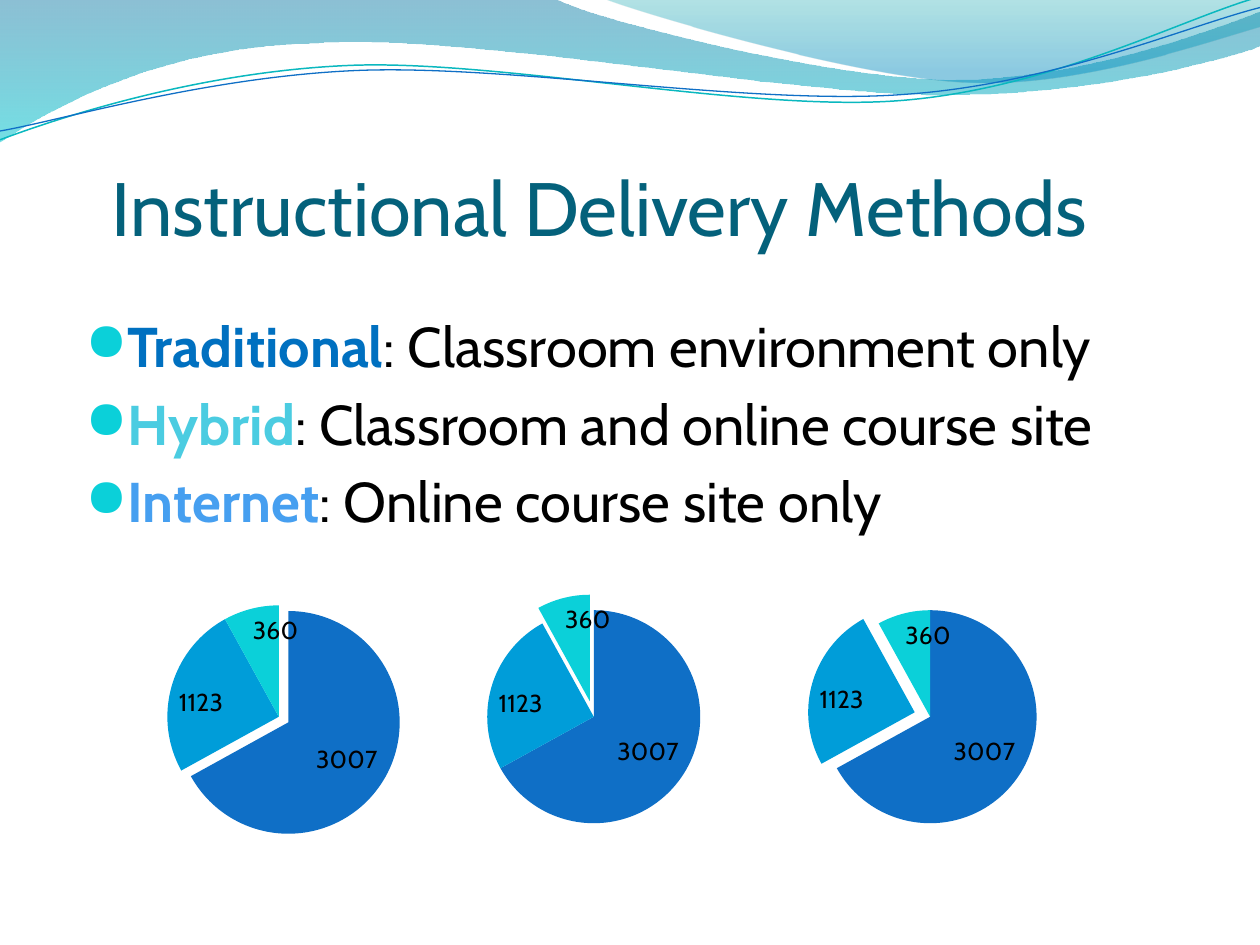
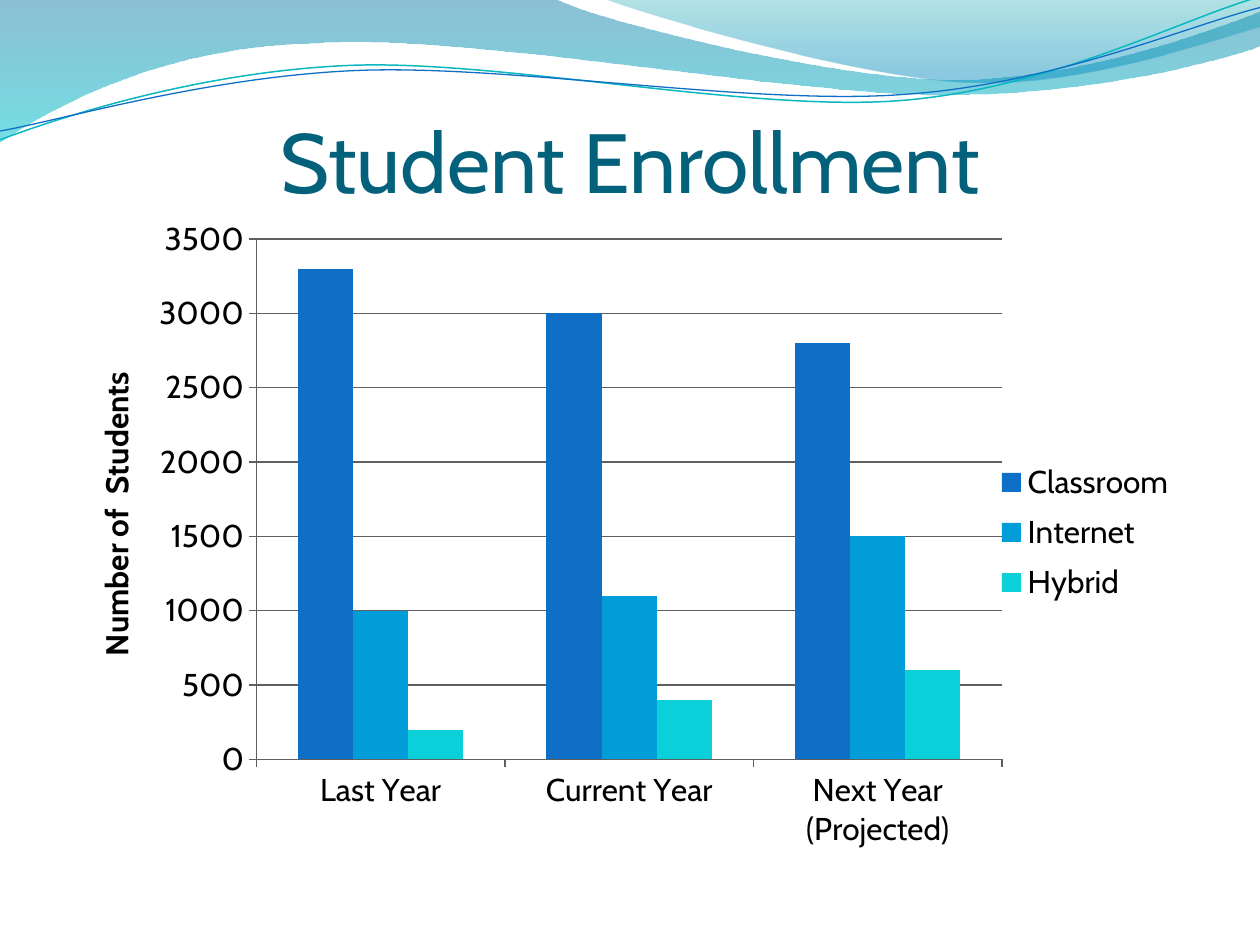
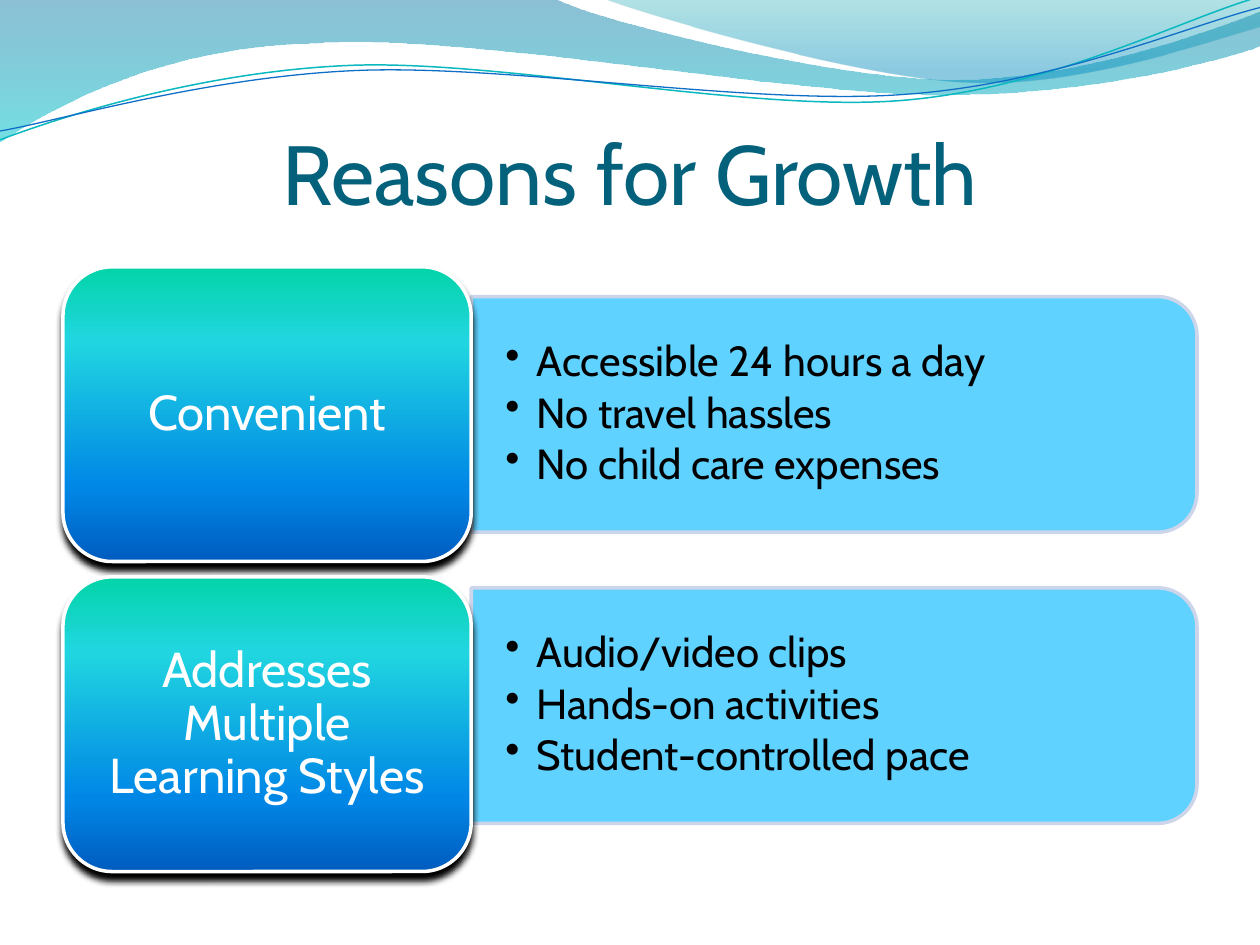
from lxml.etree import SubElement
from pptx import Presentation
from pptx.chart.data import CategoryChartData as ChartData
from pptx.dml.color import RGBColor
from pptx.enum.chart import XL_CHART_TYPE as ChartType
from pptx.enum.chart import XL_LABEL_POSITION as LabelPosition
from pptx.enum.chart import XL_LEGEND_POSITION as LegendPosition
from pptx.enum.chart import XL_TICK_MARK as TickMark
from pptx.enum.shapes import MSO_SHAPE as Shape
from pptx.enum.text import MSO_ANCHOR as Anchor
from pptx.enum.text import PP_ALIGN as Align
from pptx.oxml.ns import qn
from pptx.util import Cm, Pt

FONT = "Cabin"
BULLET_FONT = "OpenSymbol"
COLORS = {
    "title": "04617B", "text": "000000", "white": "FFFFFF", "grid": "5F5F5F",
    "blue": "0F6FC6", "sky": "009DD9", "aqua": "0BD0D9", "teal_line": "0AB8BF",
    "traditional": "0070C0", "hybrid": "4BCCE1", "internet": "469FF0",
    "panel": "4FCEFF", "panel_line": "CCD5EA",
    "wave_top": "0074A1", "wave_bottom": "00C6CF",
    "crest_top": "00A1A9", "crest_bottom": "008BBF",
    "box_green": "03D4A8", "box_cyan": "21D6E0",
    "box_azure": "0087E6", "box_navy": "005CBF",
}
SERIES_COLORS = ("blue", "sky", "aqua")
BAND_BOX = (0, 0, 25.4, 2.87)
WAVES = (
    {"start": (0, 0),
     "segments": [(440, -1), (476, 17, 664, 63, 758, 63), (853, 63, 958, 26, 1000, 9),
                  (1001, 36), (983, 44, 870, 76, 746, 75), (622, 75, 382, 28, 257, 34),
                  (129, 36, 46, 83, -1, 113)],
     "stops": [(0, "wave_top", 45), (100, "wave_bottom", 55)]},
    {"start": (479, -1),
     "segments": [(509, 11, 682, 62, 769, 65), (856, 69, 961, 32, 1000, 21), (1000, 0)],
     "stops": [(0, "crest_top", 30), (80, "crest_bottom", 45)]},
    {"start": (0, 111),
     "segments": [(48, 93, 158, 57, 277, 52), (395, 47, 593, 89, 713, 80),
                  (833, 71, 938, 15, 998, -2)],
     "line": ("teal_line", 0.85)},
    {"start": (0, 104),
     "segments": [(47, 96, 164, 61, 283, 56), (403, 51, 597, 84, 717, 75),
                  (836, 67, 941, 21, 1000, 6)],
     "line": ("blue", 0.75)},
)


def rgb(name):
    """Return the named colour."""
    return RGBColor.from_string(COLORS[name])


def place(box):
    """Turn a box in centimetres into lengths."""
    return [Cm(length) for length in box]


def add_alpha(color_element, percent):
    """Give a colour element an opacity."""
    SubElement(color_element, qn("a:alpha"), val=str(percent * 1000))


def fill_gradient(shape, stops):
    """Fill a shape from top to bottom with (position, colour, opacity) stops."""
    shape.fill.gradient()
    shape.fill.gradient_angle = 270
    stop_list = shape.element.spPr.find(".//" + qn("a:gsLst"))
    stop_list.clear()
    for position, color, opacity in stops:
        stop = SubElement(stop_list, qn("a:gs"), pos=str(position * 1000))
        color_element = SubElement(stop, qn("a:srgbClr"), val=COLORS[color])
        if opacity < 100:
            add_alpha(color_element, opacity)


def outline(shape, color, width):
    """Draw the outline of a shape."""
    shape.line.color.rgb = rgb(color)
    shape.line.width = Pt(width)


def style_font(font, size, color="text", bold=False):
    """Set the typeface, size, colour and weight of a font."""
    font.name = FONT
    font.size = Pt(size)
    font.color.rgb = rgb(color)
    font.bold = bold


def set_frame(text_frame, anchor, margins):
    """Wrap a text frame and set its anchor and margins."""
    text_frame.word_wrap = True
    text_frame.vertical_anchor = anchor
    (text_frame.margin_left, text_frame.margin_top,
     text_frame.margin_right, text_frame.margin_bottom) = place(margins)


def add_bullet(paragraph, character, indent, color="text", size=100):
    """Give a paragraph a hanging bullet."""
    properties = paragraph._p.get_or_add_pPr()
    properties.set("marL", str(Cm(indent)))
    properties.set("indent", str(-Cm(indent)))
    bullet_color = SubElement(properties, qn("a:buClr"))
    SubElement(bullet_color, qn("a:srgbClr"), val=COLORS[color])
    SubElement(properties, qn("a:buSzPct"), val=str(size * 1000))
    SubElement(properties, qn("a:buFont"), typeface=BULLET_FONT)
    SubElement(properties, qn("a:buChar"), char=character)


def curve_segments(shape, segments):
    """Turn each run of three line ends into one cubic curve."""
    line_ends = iter(shape.element.spPr.findall(".//" + qn("a:lnTo")))
    for segment in segments:
        first = next(line_ends)
        if len(segment) == 6:
            first.tag = qn("a:cubicBezTo")
            for _ in range(2):
                line_end = next(line_ends)
                first.append(line_end[0])
                line_end.getparent().remove(line_end)


def add_wave_band(slide, master, box):
    """Draw the waves in thousandths of the band's width and move them to the master."""
    left, top, width, _ = place(box)
    for index, wave in enumerate(WAVES):
        flat = [number for segment in wave["segments"] for number in segment]
        points = [(left + x * width / 1000, top + y * width / 1000)
                  for x, y in [wave["start"], *zip(flat[::2], flat[1::2])]]
        builder = slide.shapes.build_freeform(*points[0])
        builder.add_line_segments(points[1:], close="stops" in wave)
        shape = builder.convert_to_shape()
        curve_segments(shape, wave["segments"])
        shape.shadow.inherit = False
        if "stops" in wave:
            fill_gradient(shape, wave["stops"])
            shape.line.fill.background()
        else:
            shape.fill.background()
            outline(shape, *wave["line"])
        shape.element.nvSpPr.cNvPr.set("id", str(100 + index))
        master.shapes.element.append(shape.element)


def add_title(slide, box, text, size):
    """Write a slide title at the bottom of its box."""
    text_frame = slide.shapes.add_textbox(*place(box)).text_frame
    set_frame(text_frame, Anchor.BOTTOM, (0, 0.13, 0, 0))
    text_frame.text = text
    paragraph = text_frame.paragraphs[0]
    paragraph.alignment = Align.CENTER
    style_font(paragraph.runs[0].font, size, "title")


def start_slide(presentation, title_box, title, size=48):
    """Add a slide with a title."""
    slide = presentation.slides.add_slide(presentation.slide_layouts[6])
    add_title(slide, title_box, title, size)
    return slide


def add_definitions(slide, box, definitions):
    """List terms in colour, each with its meaning."""
    text_frame = slide.shapes.add_textbox(*place(box)).text_frame
    set_frame(text_frame, Anchor.TOP, (0.25, 0.13, 0.25, 0.13))
    for index, (term, meaning, color) in enumerate(definitions):
        paragraph = text_frame.add_paragraph() if index else text_frame.paragraphs[0]
        add_bullet(paragraph, "●", 0.76, "aqua", 95)
        paragraph.space_before = Pt(6)
        for text, run_color, bold in ((term, color, True), (": " + meaning, "text", False)):
            run = paragraph.add_run()
            run.text = text
            style_font(run.font, 32, run_color, bold)


def add_styled_chart(slide, box, chart_type, categories, series):
    """Add a chart with the shared font."""
    data = ChartData()
    data.categories = categories
    for name, values in series:
        data.add_series(name, values)
    chart = slide.shapes.add_chart(chart_type, *place(box), data).chart
    chart.has_title = False
    style_font(chart.font, 18)
    return chart


def add_pie(slide, box, exploded_point, explosion):
    """Add an enrollment pie with one slice pulled out."""
    chart = add_styled_chart(slide, box, ChartType.PIE, ["1", "2", "3"],
                             [("Series 1", (3007, 1123, 360))])
    chart.has_legend = False
    plot = chart.plots[0]
    plot.vary_by_categories = True
    plot.has_data_labels = True
    labels = plot.data_labels
    labels.show_value = True
    labels.show_percentage = False
    labels.position = LabelPosition.INSIDE_END
    style_font(labels.font, 14)
    for index, color in enumerate(SERIES_COLORS):
        point_format = plot.series[0].points[index].format
        point_format.fill.solid()
        point_format.fill.fore_color.rgb = rgb(color)
    point = plot.series[0]._element.findall(qn("c:dPt"))[exploded_point]
    pull = SubElement(point, qn("c:explosion"), val=str(explosion))
    point.find(qn("c:spPr")).addprevious(pull)


def set_layout(element, index, chart_box, part_box, inner=False):
    """Fix a chart part at a place in centimetres inside the chart."""
    layout = element.find(qn("c:layout"))
    if layout is None:
        layout = SubElement(element, qn("c:layout"))
        element.insert(index, layout)
    manual = SubElement(layout, qn("c:manualLayout"))
    settings = [("layoutTarget", "inner")] if inner else []
    settings += [("xMode", "edge"), ("yMode", "edge")]
    sizes = chart_box[2:] * 2
    settings += [(name, length / size) for name, length, size in zip("xywh", part_box, sizes)]
    for name, value in settings:
        SubElement(manual, qn("c:" + name), val=str(value))


def add_enrollment_chart(slide, box):
    """Add the clustered columns of students by year."""
    chart = add_styled_chart(
        slide, box, ChartType.COLUMN_CLUSTERED,
        ["Last Year", "Current Year", "Next Year\n(Projected)"],
        [("Classroom", (3300, 3000, 2800)), ("Internet", (1000, 1100, 1500)),
         ("Hybrid", (200, 400, 600))])
    chart.has_legend = True
    chart.legend.position = LegendPosition.RIGHT
    chart.legend.include_in_layout = False
    plot = chart.plots[0]
    plot.vary_by_categories = False
    plot.gap_width = 150
    plot.overlap = 0
    for series, color in zip(plot.series, SERIES_COLORS):
        series.format.fill.solid()
        series.format.fill.fore_color.rgb = rgb(color)
    value_axis = chart.value_axis
    value_axis.minimum_scale, value_axis.maximum_scale = 0, 3500
    value_axis.major_unit = 500
    value_axis.has_major_gridlines = True
    for part in (value_axis, chart.category_axis, value_axis.major_gridlines):
        outline(part.format, "grid", 0.75)
    for axis in (value_axis, chart.category_axis):
        axis.major_tick_mark = TickMark.OUTSIDE
        style_font(axis.tick_labels.font, 18)
    text_frame = value_axis.axis_title.text_frame
    text_frame.text = "Number of  Students"
    style_font(text_frame.paragraphs[0].runs[0].font, 18, bold=True)
    text_frame._txBody.bodyPr.set("rot", "-5400000")
    text_frame._txBody.bodyPr.set("vert", "horz")
    set_layout(chart._chartSpace.chart.plotArea, 0, box, (3.7, 0.58, 15.03, 10.49), True)
    set_layout(value_axis.axis_title._element, 1, box, (0.32, 3.15))
    set_layout(chart.legend._element, 1, box, (18.59, 4.86, 3.63, 3.27))


def add_panel(slide, box, points):
    """Add a panel rounded on its right side, with bullet points."""
    left, top, width, height = box
    turned = (left + (width - height) / 2, top + (height - width) / 2, height, width)
    shape = slide.shapes.add_shape(Shape.ROUND_2_SAME_RECTANGLE, *place(turned))
    shape.rotation = 90
    shape.shadow.inherit = False
    shape.fill.solid()
    shape.fill.fore_color.rgb = rgb("panel")
    add_alpha(shape.element.spPr.find(qn("a:solidFill"))[0], 90)
    outline(shape, "panel_line", 2)
    text_box = (left, top + 0.23, width - 0.23, height - 0.46)
    text_frame = slide.shapes.add_textbox(*place(text_box)).text_frame
    set_frame(text_frame, Anchor.MIDDLE, (0.69, 0.36, 0.69, 0.36))
    text_frame.text = "\n".join(points)
    for paragraph in text_frame.paragraphs:
        add_bullet(paragraph, "•", 0.63)
        paragraph.line_spacing = 0.9
        paragraph.space_after = Pt(3.6)
        style_font(paragraph.runs[0].font, 24)


def add_reason_box(slide, box, text):
    """Add a glossy rounded box that names a reason."""
    shape = slide.shapes.add_shape(Shape.ROUNDED_RECTANGLE, *place(box))
    fill_gradient(shape, [(0, "box_green", 100), (25, "box_cyan", 100),
                          (75, "box_azure", 100), (100, "box_navy", 100)])
    outline(shape, "white", 2)
    shape.shadow.inherit = False
    effects = shape.element.spPr.find(qn("a:effectLst"))
    shadow = SubElement(effects, qn("a:outerShdw"), blurRad=str(Pt(4)), dist=str(Pt(4)),
                        dir="5400000", algn="ctr", rotWithShape="0")
    SubElement(shadow, qn("a:srgbClr"), val=COLORS["text"])
    set_frame(shape.text_frame, Anchor.MIDDLE, (0.3, 0.15, 0.3, 0.15))
    shape.text_frame.text = text
    paragraph = shape.text_frame.paragraphs[0]
    paragraph.alignment = Align.CENTER
    paragraph.line_spacing = 0.9
    style_font(paragraph.runs[0].font, 28, "white")


def build_methods_slide(presentation):
    """Build the slide on delivery methods, and the band that all slides share."""
    slide = start_slide(presentation, (1.07, 1.9, 22.02, 3.18),
                        "Instructional Delivery Methods", 43.2)
    add_wave_band(slide, presentation.slide_master, BAND_BOX)
    add_definitions(slide, (1.47, 6.15, 22.86, 5.28), [
        ("Traditional", "Classroom environment only", "traditional"),
        ("Hybrid", "Classroom and online course site", "hybrid"),
        ("Internet", "Online course site only", "internet")])
    for left, exploded_point, explosion in ((0.64, 0, 10), (6.99, 2, 15), (13.77, 1, 15)):
        add_pie(slide, (left, 11.63, 9.96, 5.64), exploded_point, explosion)


def build_enrollment_slide(presentation):
    """Build the slide on student enrollment."""
    slide = start_slide(presentation, (1.27, 1.07, 22.86, 3.18), "Student Enrollment")
    add_enrollment_chart(slide, (1.47, 4.24, 22.43, 13.46))


def build_reasons_slide(presentation):
    """Build the slide on reasons for growth."""
    slide = start_slide(presentation, (1.27, 1.9, 22.86, 2.59), "Reasons for Growth")
    reasons = [
        ("Convenient", 5.38, 5.98,
         ["Accessible 24 hours a day", "No travel hassles", "No child care expenses"]),
        ("Addresses Multiple Learning Styles", 11.63, 11.85,
         ["Audio/video clips", "Hands-on activities", "Student-controlled pace"])]
    for reason, box_top, panel_top, points in reasons:
        add_panel(slide, (9.5, panel_top, 14.63, 4.75), points)
        add_reason_box(slide, (1.27, box_top, 8.23, 5.94), reason)


def main():
    """Build and save the presentation."""
    presentation = Presentation()
    presentation.slide_width = Cm(25.4)
    presentation.slide_height = Cm(19.05)
    build_methods_slide(presentation)
    build_enrollment_slide(presentation)
    build_reasons_slide(presentation)
    presentation.save("out.pptx")


if __name__ == "__main__":
    main()
